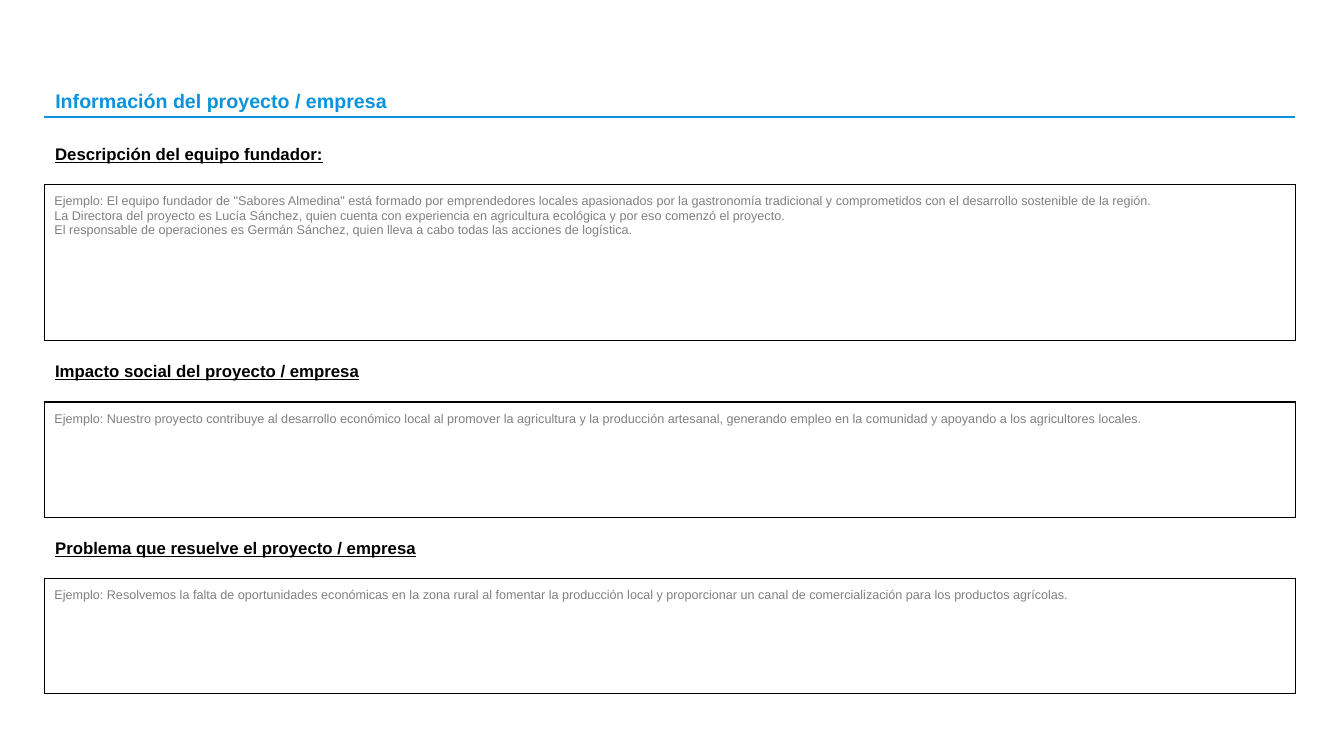
from lxml import etree
from pptx import Presentation
from pptx.dml.color import RGBColor
from pptx.enum.shapes import MSO_CONNECTOR as Connector
from pptx.enum.text import MSO_ANCHOR as Anchor, MSO_AUTO_SIZE as AutoSize, PP_ALIGN as Align
from pptx.oxml import parse_xml
from pptx.oxml.ns import nsdecls, qn
from pptx.util import Cm, Pt

LEFT, WIDTH = 1.12, 31.52
TEXT_LEFT, TEXT_WIDTH, TEXT_HEIGHT = 1.14, 11.33, 0.69
TABLE_OFFSET = 1.12
TITLE = {"name": "Arial", "size": Pt(14), "bold": True}
HEADING = {"name": "Arial", "size": Pt(12), "bold": True, "underline": True}
EXAMPLE = {"name": "Arial", "size": Pt(9), "bold": False}
SECTIONS = [
    (3.53, 3.94, "Descripción del equipo fundador:", [
        'Ejemplo: El equipo fundador de "Sabores Almedina" está formado por emprendedores locales '
        "apasionados por la gastronomía tradicional y comprometidos con el desarrollo sostenible de la región.",
        "La Directora del proyecto es Lucía Sánchez, quien cuenta con experiencia en agricultura ecológica "
        "y por eso comenzó el proyecto.",
        "El responsable de operaciones es Germán Sánchez, quien lleva a cabo todas las acciones de logística.",
    ]),
    (9.01, 2.9, "Impacto social del proyecto / empresa", [
        "Ejemplo: Nuestro proyecto contribuye al desarrollo económico local al promover la agricultura y la "
        "producción artesanal, generando empleo en la comunidad y apoyando a los agricultores locales.",
    ]),
    (13.45, 2.9, "Problema que resuelve el proyecto / empresa", [
        "Ejemplo: Resolvemos la falta de oportunidades económicas en la zona rural al fomentar la producción "
        "local y proporcionar un canal de comercialización para los productos agrícolas.",
    ]),
]


def color(value):
    return RGBColor.from_string(value)


def write(frame, lines, style, ink):
    frame.word_wrap = True
    for index, line in enumerate(lines):
        para = frame.add_paragraph() if index else frame.paragraphs[0]
        para.alignment = Align.LEFT
        span = para.add_run()
        span.text = line
        for name, value in style.items():
            setattr(span.font, name, value)
        span.font.color.rgb = color(ink)


deck = Presentation()
deck.slide_width, deck.slide_height = Cm(33.87), Cm(19.05)
page = deck.slides.add_slide(deck.slide_layouts[5])

title = page.shapes.title
title.left, title.top = Cm(TEXT_LEFT), Cm(2.18)
title.width, title.height = Cm(TEXT_WIDTH), Cm(TEXT_HEIGHT)
title.text_frame.auto_size = AutoSize.NONE
title.text_frame.vertical_anchor = Anchor.MIDDLE
write(title.text_frame, ["Información del proyecto / empresa"], TITLE, "0A92DD")

rule = page.shapes.add_connector(Connector.STRAIGHT, Cm(LEFT), Cm(2.95), Cm(LEFT + WIDTH), Cm(2.95))
rule.line.color.rgb = color("0A92DD")
rule.line.width = Pt(1.5)
etree.SubElement(rule._element.spPr, qn("a:effectLst"))

for top, height, heading, examples in SECTIONS:
    box = page.shapes.add_textbox(Cm(TEXT_LEFT), Cm(top), Cm(TEXT_WIDTH), Cm(TEXT_HEIGHT))
    box.text_frame.vertical_anchor = Anchor.MIDDLE
    write(box.text_frame, [heading], HEADING, "000000")

    table = page.shapes.add_table(1, 1, Cm(LEFT), Cm(top + TABLE_OFFSET), Cm(WIDTH), Cm(height)).table
    table.first_row = table.horz_banding = False
    cell = table.cell(0, 0)
    cell.fill.solid()
    cell.fill.fore_color.rgb = color("FFFFFF")
    for side in ("left", "top", "right", "bottom"):
        setattr(cell, f"margin_{side}", Cm(0.25))
    for index, side in enumerate("LRTB"):
        border = parse_xml(
            f'<a:ln{side} {nsdecls("a")} w="{Pt(1)}"><a:solidFill>'
            f'<a:srgbClr val="000000"/></a:solidFill></a:ln{side}>')
        cell._tc.tcPr.insert(index, border)
    write(cell.text_frame, examples, EXAMPLE, "808080")

deck.save("out.pptx")
